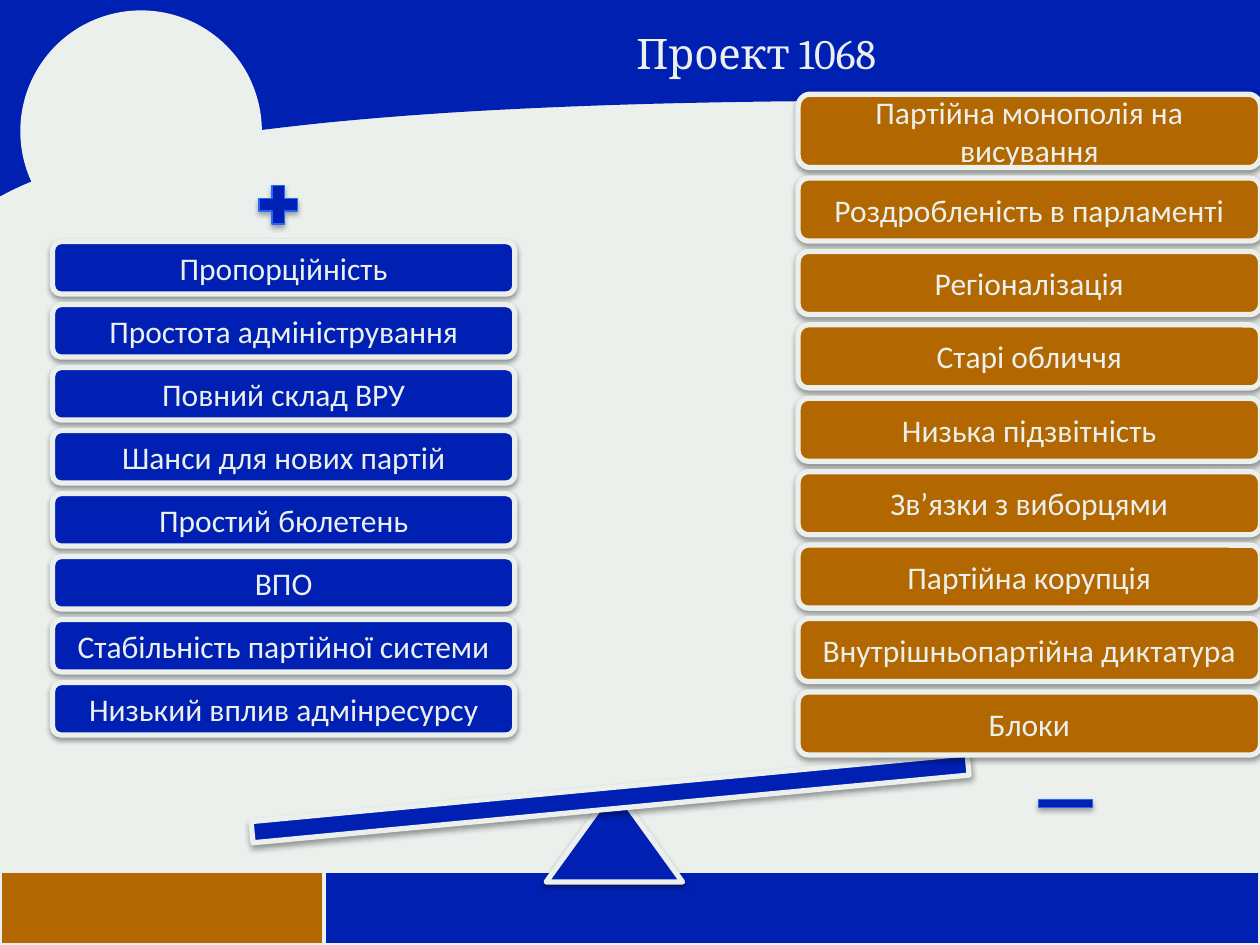
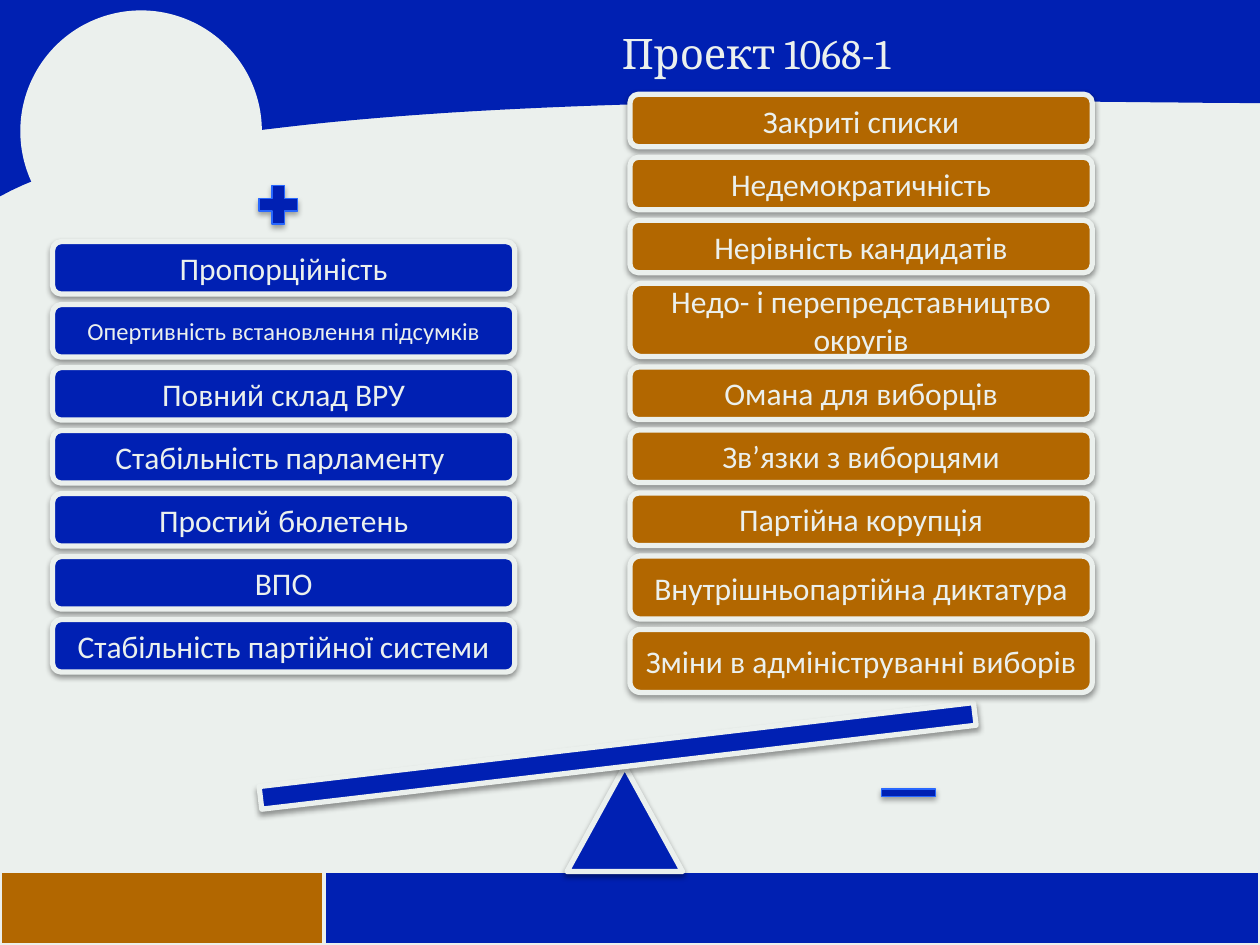
from lxml.etree import SubElement
from pptx import Presentation
from pptx.dml.color import RGBColor
from pptx.enum.shapes import MSO_SHAPE as SHAPE
from pptx.enum.text import MSO_ANCHOR as ANCHOR, PP_ALIGN as ALIGN
from pptx.oxml.ns import qn
from pptx.util import Cm, Pt

PAPER, BLUE, BAND_BLUE, ORANGE, SIGN_LINE = "EBF0ED", "0020B3", "0020B2", "B26700", "2867FE"
LOW, MID, HIGH = 1.06, 1.27, 1.48
GAP, CARD_W = 0.21, 9.32
CARD_SHADOW, SIGN_SHADOW = (38, 20000), (35, 23000)

slides = [
    {
        "title": "Проект 1068",
        "triangle": (11.01, 15.88, 2.75, 1.9),
        "plank": (5.05, 15.88, 14.5, 0.43),
        "tilt": -5.4,
        "minus": (20.74, 15.88),
        "pros": ["Пропорційність", "Простота адміністрування", "Повний склад ВРУ",
                 "Шанси для нових партій", "Простий бюлетень", "ВПО",
                 "Стабільність партійної системи", "Низький вплив адмінресурсу"],
        "cons_left": 16.09,
        "cons": ["Партійна монополія на висування", "Роздробленість в парламенті",
                 "Регіоналізація", "Старі обличчя", "Низька підзвітність",
                 "Зв’язки з виборцями", "Партійна корупція",
                 "Внутрішньопартійна диктатура", "Блоки"],
        "cons_heights": [HIGH] + [MID] * 8,
    },
    {
        "title": "Проект 1068-1",
        "triangle": (11.43, 15.45, 2.33, 2.12),
        "plank": (5.2, 15.01, 14.5, 0.46),
        "tilt": -6.7,
        "minus": (17.57, 15.66),
        "pros": ["Пропорційність", "Опертивність встановлення підсумків", "Повний склад ВРУ",
                 "Стабільність парламенту ", "Простий бюлетень", "ВПО",
                 "Стабільність партійної системи"],
        "cons_left": 12.7,
        "cons": ["Закриті списки", "Недемократичність", "Нерівність кандидатів",
                 "Недо- і перепредставництво округів", "Омана для виборців",
                 "Зв’язки з виборцями", "Партійна корупція",
                 "Внутрішньопартійна диктатура", "Зміни в адмініструванні виборів"],
        "cons_heights": [LOW] * 3 + [HIGH] + [LOW] * 3 + [MID] * 2,
    },
]
small_text = {"Опертивність встановлення підсумків": 14}


def rgb(color):
    return RGBColor.from_string(color)


def add_shape(s, kind, box, fill, line=None, width=3, shadow=None):
    sp = s.shapes.add_shape(kind, *[Cm(v) for v in box])
    sp.fill.solid()
    sp.fill.fore_color.rgb = rgb(fill)
    if line:
        sp.line.color.rgb = rgb(line)
        sp.line.width = Pt(width)
    else:
        sp.line.fill.background()
    sp.shadow.inherit = False
    if shadow:
        alpha, dist = shadow
        effects = sp._element.spPr.find(qn("a:effectLst"))
        outer = SubElement(effects, qn("a:outerShdw"), blurRad="40000", dist=str(dist),
                           dir="5400000", rotWithShape="0")
        black = SubElement(outer, qn("a:srgbClr"), val="000000")
        SubElement(black, qn("a:alpha"), val=str(alpha * 1000))
    return sp


prs = Presentation()
prs.slide_width, prs.slide_height = Cm(25.4), Cm(19.05)

curve = [(25.4, 2.08), (19.46, 2.06), (4.24, 1.6), (0, 3.96)]
wave = [(0, 0), (25.4, 0)]
for i in range(61):
    t = i / 60
    weights = [(1 - t) ** 3, 3 * t * (1 - t) ** 2, 3 * t ** 2 * (1 - t), t ** 3]
    wave.append(tuple(sum(w * pt[axis] for w, pt in zip(weights, curve)) for axis in (0, 1)))

for data in slides:
    s = prs.slides.add_slide(prs.slide_layouts[6])
    s.background.fill.solid()
    s.background.fill.fore_color.rgb = rgb(PAPER)

    add_shape(s, SHAPE.RECTANGLE, (0, 17.57, 6.56, 1.48), ORANGE, PAPER, 2)
    add_shape(s, SHAPE.RECTANGLE, (6.53, 17.57, 18.87, 1.48), BAND_BLUE, PAPER, 2)
    points = [(Cm(x), Cm(y)) for x, y in wave]
    builder = s.shapes.build_freeform(*points[0])
    builder.add_line_segments(points[1:], close=True)
    sp = builder.convert_to_shape()
    sp.fill.solid()
    sp.fill.fore_color.rgb = rgb(BAND_BLUE)
    sp.line.fill.background()
    sp.shadow.inherit = False
    add_shape(s, SHAPE.OVAL, (0.41, 0.21, 4.87, 4.87), PAPER)

    tf = s.shapes.add_textbox(Cm(5.51), Cm(-0.42), Cm(19.47), Cm(2.96)).text_frame
    tf.word_wrap = True
    tf.vertical_anchor = ANCHOR.MIDDLE
    tf.text = data["title"]
    p = tf.paragraphs[0]
    p.alignment = ALIGN.CENTER
    r = p.runs[0]
    r.font.name, r.font.size = "Cambria", Pt(24)
    r.font.color.rgb = rgb(PAPER)

    add_shape(s, SHAPE.ISOSCELES_TRIANGLE, data["triangle"], BLUE, PAPER, shadow=CARD_SHADOW)
    plank = add_shape(s, SHAPE.RECTANGLE, data["plank"], BLUE, PAPER, shadow=CARD_SHADOW)
    plank.rotation = data["tilt"]

    columns = [
        (1.06, 4.87, BLUE, data["pros"], [LOW] * len(data["pros"])),
        (data["cons_left"], 1.9, ORANGE, data["cons"], data["cons_heights"]),
    ]
    for left, top, fill, texts, heights in columns:
        for text, height in zip(texts, heights):
            card = add_shape(s, SHAPE.ROUNDED_RECTANGLE, (left, top, CARD_W, height),
                             fill, PAPER, shadow=CARD_SHADOW)
            tf = card.text_frame
            tf.word_wrap = True
            tf.vertical_anchor = ANCHOR.MIDDLE
            tf.text = text
            p = tf.paragraphs[0]
            p.alignment = ALIGN.CENTER
            r = p.runs[0]
            r.font.name, r.font.size = "Calibri", Pt(small_text.get(text, 18))
            r.font.color.rgb = rgb(PAPER)
            top += height + GAP

    signs = [
        (SHAPE.MATH_PLUS, (5.08, 3.6, 1.06, 1.06)),
        (SHAPE.MATH_MINUS, (*data["minus"], 1.48, 0.64)),
    ]
    for kind, box in signs:
        add_shape(s, kind, box, BLUE, SIGN_LINE, 0.75, SIGN_SHADOW)

prs.save("out.pptx")
